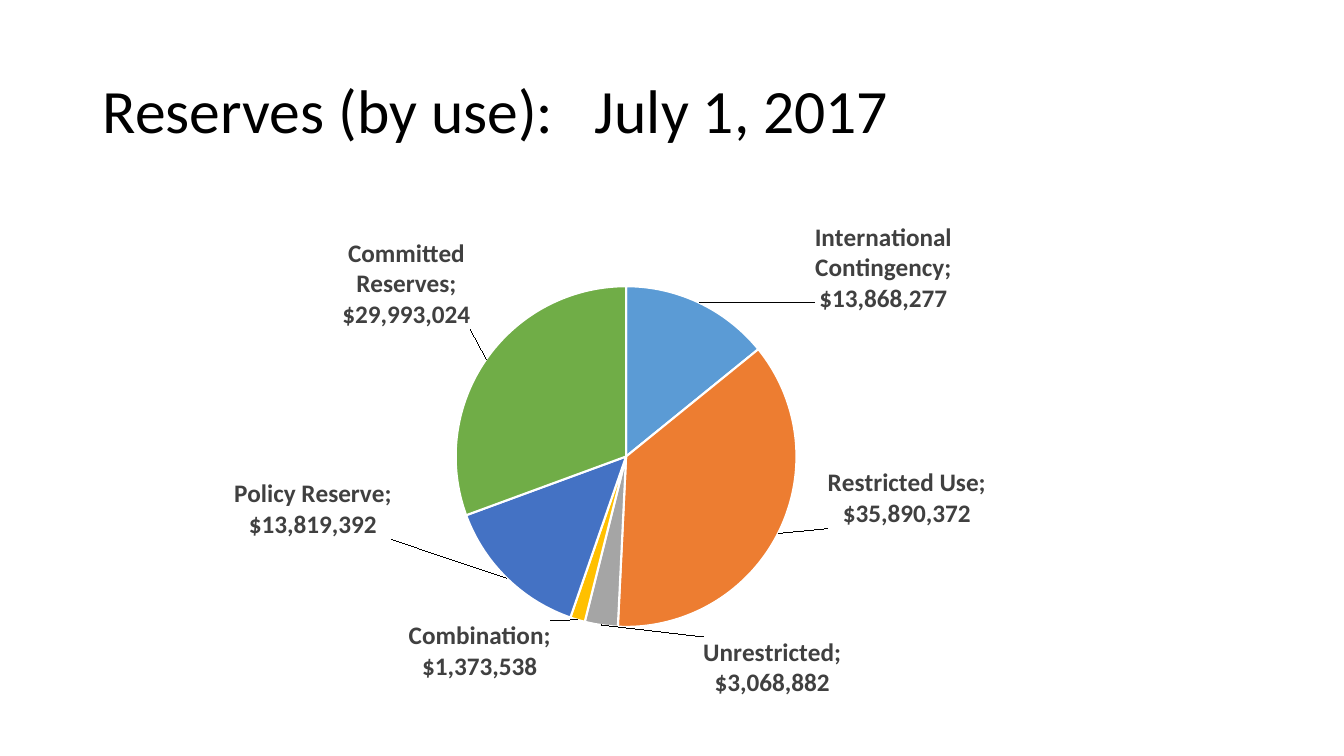
from pptx import Presentation
from pptx.chart.data import CategoryChartData
from pptx.dml.color import RGBColor
from pptx.enum.chart import XL_CHART_TYPE, XL_LABEL_POSITION
from pptx.enum.text import MSO_ANCHOR, PP_ALIGN
from pptx.oxml import parse_xml
from pptx.oxml.ns import nsdecls, qn
from pptx.util import Inches, Pt

PIE = XL_CHART_TYPE.PIE
OUTSIDE_END = XL_LABEL_POSITION.OUTSIDE_END
MIDDLE = MSO_ANCHOR.MIDDLE
LEFT = PP_ALIGN.LEFT

FONT = "Calibri"
MONEY = '"$"#,##0'
TITLE_BOX = (0.92, 0.4, 11.5, 1.45)
CHART_BOX = (1.96, 1.85, 8.72, 5.17)
PIE_BOX = (2.56, 0.99, 3.38, 3.38)

RESERVES = [
    ("International Contingency", 13868277, "5B9BD5", (1.12, 0.16)),
    ("Restricted Use", 35890372, "ED7D31", (0.44, -0.68)),
    ("Unrestricted", 3068882, "A5A5A5", (2.39, 0.06)),
    ("Combination", 1373538, "FFC000", (-0.25, -0.05)),
    ("Policy Reserve", 13819392, "4472C4", (-1.1, -1.03)),
    ("Committed Reserves", 29993024, "70AD47", (-0.11, -0.26)),
]


def rgb(value):
    return RGBColor.from_string(value)


def style_font(font, size, color, bold=False):
    font.name = FONT
    font.size = Pt(size)
    font.bold = bold
    font.color.rgb = rgb(color)


def make_layout(parts):
    children = "".join(f'<c:{tag} val="{val}"/>' for tag, val in parts)
    return parse_xml(
        f'<c:layout {nsdecls("c")}><c:manualLayout>{children}'
        "</c:manualLayout></c:layout>"
    )


def place_pie(chart, box, width, height):
    x, y, w, h = box
    area = chart.element.find(".//" + qn("c:plotArea"))
    for old in area.findall(qn("c:layout")):
        area.remove(old)
    area.insert(0, make_layout([
        ("layoutTarget", "inner"), ("xMode", "edge"), ("yMode", "edge"),
        ("x", x / width), ("y", y / height),
        ("w", w / width), ("h", h / height),
    ]))


def set_separators(chart):
    for last in chart.element.findall(".//" + qn("c:showBubbleSize")):
        last.addnext(parse_xml(f'<c:separator {nsdecls("c")}>; </c:separator>'))


def add_title(slide, box):
    sp = slide.shapes.title
    sp.left, sp.top, sp.width, sp.height = map(Inches, box)
    tf = sp.text_frame
    tf.text = "Reserves (by use):   July 1, 2017"
    tf.vertical_anchor = MIDDLE
    tf.word_wrap = True
    p = tf.paragraphs[0]
    p.alignment = LEFT
    p.line_spacing = 0.9
    style_font(p.runs[0].font, 44, "000000")


def add_reserves_chart(slide, box):
    width, height = box[2:]
    data = CategoryChartData(number_format=MONEY)
    data.categories = [name for name, *_ in RESERVES]
    data.add_series("Series 1", [amount for _, amount, *_ in RESERVES])
    chart = slide.shapes.add_chart(PIE, *map(Inches, box), data).chart
    chart.has_title = False
    chart.has_legend = False
    style_font(chart.font, 10, "000000")
    plot = chart.plots[0]
    plot.vary_by_categories = True
    place_pie(chart, PIE_BOX, width, height)

    series = plot.series[0]
    labels = series.data_labels
    labels.show_value = True
    labels.show_category_name = True
    labels.number_format = MONEY
    labels.number_format_is_linked = False
    labels.position = OUTSIDE_END
    style_font(labels.font, 18, "404040", True)

    for i, (_, _, color, (dx, dy)) in enumerate(RESERVES):
        point = series.points[i]
        point.format.fill.solid()
        point.format.fill.fore_color.rgb = rgb(color)
        point.format.line.color.rgb = rgb("FFFFFF")
        point.format.line.width = Pt(1.5)
        label = point.data_label
        style_font(label.font, 18, "404040", True)
        label.position = OUTSIDE_END

    offsets = [offset for *_, offset in RESERVES]
    for node, (dx, dy) in zip(chart.element.iter(qn("c:dLbl")), offsets):
        node.find(qn("c:showCatName")).set("val", "1")
        node.find(qn("c:idx")).addnext(
            make_layout([("x", dx / width), ("y", dy / height)])
        )
    set_separators(chart)


def main():
    prs = Presentation()
    prs.slide_width = Inches(13.33)
    prs.slide_height = Inches(7.5)
    slide = prs.slides.add_slide(prs.slide_layouts[5])
    add_title(slide, TITLE_BOX)
    add_reserves_chart(slide, CHART_BOX)
    prs.save("out.pptx")


if __name__ == "__main__":
    main()
